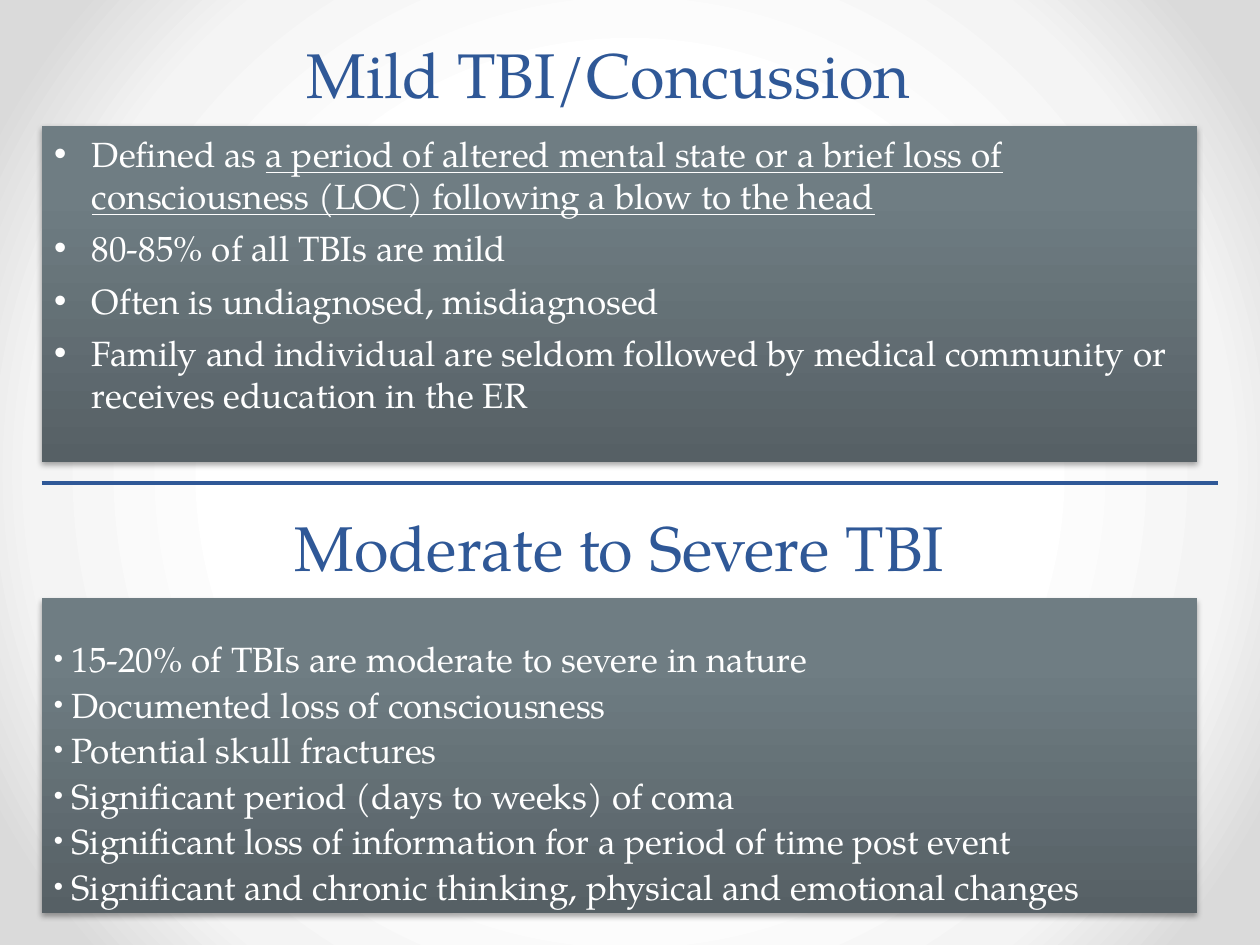
from dataclasses import dataclass

import pptx
import pptx.dml.color
import pptx.enum.shapes
import pptx.enum.text
import pptx.oxml
import pptx.oxml.ns
import pptx.util
from pptx.util import Inches, Pt

NS = pptx.oxml.ns.nsdecls("a")
qn = pptx.oxml.ns.qn
Align = pptx.enum.text.PP_ALIGN
Anchor = pptx.enum.text.MSO_ANCHOR


@dataclass(frozen=True)
class Theme:
    font: str = "TeX Gyre Pagella"
    blue: str = "2F5897"
    white: str = "FFFFFF"
    heading: int = 36
    body: int = 20
    panel: tuple = ((0, "566065"), (80, "6F7D83"), (100, "6F7E84"))
    backdrop: tuple = ((50, "FFFFFF"), (76, "F4F4F4"), (92, "DADADA"))


T = Theme()
LEFT, PANEL_W = 0.33, 9.17

MILD = [
    ("Defined as ", "a period of altered mental state or a brief loss of "
     "consciousness (LOC) following a blow to the head"),
    ("80-85% of all TBIs are mild",),
    ("Often is undiagnosed, misdiagnosed",),
    ("Family and individual are seldom followed by medical community or "
     "receives education in the ER",),
]
SEVERE = [
    ("15-20% of TBIs are moderate to severe in nature",),
    ("Documented loss of consciousness",),
    ("Potential skull fractures",),
    ("Significant period (days to weeks) of coma",),
    ("Significant loss of information for a period of time post event",),
    ("Significant and chronic thinking, physical and emotional changes",),
]


def rgb(color):
    return pptx.dml.color.RGBColor.from_string(color)


def set_all(obj, values):
    for name, value in values.items():
        setattr(obj, name, value)


def place(sp, *box):
    set_all(sp, dict(zip(("left", "top", "width", "height"), map(Inches, box))))


def fill_gradient(fill, element, stops, direction):
    """Fill with a gradient of any number of stops; direction is its XML."""
    fill.solid()
    solid = next(element.iter(qn("a:solidFill")))
    gs = "".join(f'<a:gs pos="{pos * 1000}"><a:srgbClr val="{color}"/></a:gs>'
                 for pos, color in stops)
    grad = pptx.oxml.parse_xml(
        f'<a:gradFill {NS} rotWithShape="1"><a:gsLst>{gs}</a:gsLst>{direction}</a:gradFill>')
    solid.getparent().replace(solid, grad)


def add_run(p, text, size, color, underline=False):
    r = p.add_run()
    r.text = text
    set_all(r.font, {"name": T.font, "size": Pt(size), "bold": False,
                     "underline": underline})
    r.font.color.rgb = rgb(color)


def frame(sp, anchor):
    tf = sp.text_frame
    set_all(tf, {"word_wrap": True, "vertical_anchor": anchor,
                 "auto_size": pptx.enum.text.MSO_AUTO_SIZE.NONE})
    return tf


def heading(sp, text, box, space_before):
    place(sp, *box)
    p = frame(sp, Anchor.MIDDLE).paragraphs[0]
    set_all(p, {"alignment": Align.CENTER, "space_before": Pt(space_before)})
    add_run(p, text, T.heading, T.blue)


def panel(sp, top, height):
    """Grey gradient box with a soft shadow below it."""
    place(sp, LEFT, top, PANEL_W, height)
    fill_gradient(sp.fill, sp.element.spPr, T.panel, '<a:lin ang="16200000" scaled="0"/>')
    sp.line.fill.background()
    sp.shadow.inherit = False
    sp.element.spPr.find(qn("a:effectLst")).append(pptx.oxml.parse_xml(
        f'<a:outerShdw {NS} blurRad="{Pt(3.1)}" dist="{Pt(1.8)}" dir="5400000" rotWithShape="0">'
        '<a:srgbClr val="000000"><a:alpha val="35000"/></a:srgbClr></a:outerShdw>'))


def bullets(sp, items, anchor, indent, bullet_pct, spacing):
    """Each item is its plain text, then optionally its underlined text."""
    tf = frame(sp, anchor)
    for i, parts in enumerate(items):
        p = tf.add_paragraph() if i else tf.paragraphs[0]
        set_all(p, {"alignment": Align.LEFT, **spacing})
        pPr = p._p.get_or_add_pPr()
        pPr.set("marL", str(Inches(indent)))
        pPr.set("indent", str(-Inches(indent)))
        for xml in (f'<a:buClr {NS}><a:srgbClr val="{T.white}"/></a:buClr>',
                    f'<a:buSzPct {NS} val="{bullet_pct * 1000}"/>',
                    f'<a:buFont {NS} typeface="Arial"/>',
                    f'<a:buChar {NS} char="•"/>'):
            pPr.append(pptx.oxml.parse_xml(xml))
        for j, text in enumerate(parts):
            add_run(p, text, T.body, T.white, underline=j == 1)


def divider(s, y):
    cx = s.shapes.add_connector(pptx.enum.shapes.MSO_CONNECTOR.STRAIGHT,
                                Inches(LEFT), Inches(y), Inches(10 - LEFT), Inches(y))
    cx.line.color.rgb = rgb(T.blue)
    cx.line.width = Pt(2.25)
    cx.element.spPr.append(pptx.oxml.parse_xml(f"<a:effectLst {NS}/>"))


def main():
    prs = pptx.Presentation()
    set_all(prs, {"slide_width": Inches(10), "slide_height": Inches(7.5)})
    s = prs.slides.add_slide(prs.slide_layouts.get_by_name("Comparison"))
    fill_gradient(s.background.fill, s.element, T.backdrop,
                  '<a:path path="circle"><a:fillToRect l="50000" t="50000" '
                  'r="50000" b="50000"/></a:path>')

    holders = {sp.placeholder_format.idx: sp for sp in s.placeholders}
    for idx in (3, 4):
        unused = holders[idx].element
        unused.getparent().remove(unused)

    heading(holders[0], "Mild TBI/Concussion", (1.08, 0.25, 7.5, 0.67), 7.2)
    heading(holders[1], "Moderate to Severe TBI", (0.53, 4, 8.77, 0.67), 10.8)
    divider(s, 3.83)

    mild = holders[2]
    panel(mild, 1, 2.67)
    bullets(mild, MILD, Anchor.TOP, 0.3, 100, {"space_before": Pt(6)})

    severe = s.shapes.add_shape(pptx.enum.shapes.MSO_SHAPE.RECTANGLE, 0, 0, 0, 0)
    panel(severe, 4.75, 2.5)
    bullets(severe, SEVERE, Anchor.BOTTOM, 0.14, 75,
            {"line_spacing": Pt(16), "space_before": Pt(10)})

    prs.save("out.pptx")


if __name__ == "__main__":
    main()
